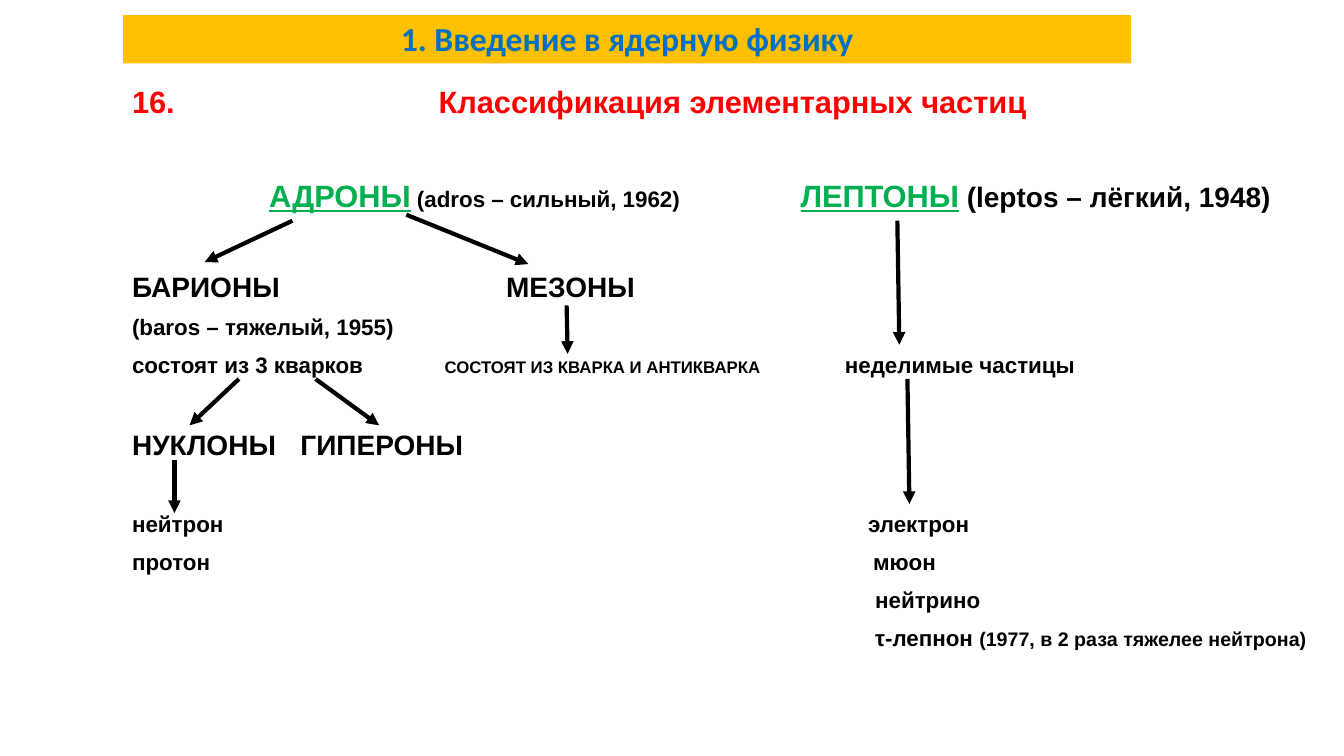
"""Builds a slide that classifies elementary particles as a tree."""
from dataclasses import dataclass

from lxml.etree import SubElement
from pptx import Presentation
from pptx.dml.color import RGBColor as Rgb
from pptx.enum.shapes import MSO_CONNECTOR as Connector
from pptx.enum.text import MSO_ANCHOR as Anchor, MSO_AUTO_SIZE as AutoSize, PP_ALIGN as Align
from pptx.oxml.ns import qn
from pptx.util import Pt

PX = 9144


@dataclass(frozen=True)
class Theme:
    band: Rgb = Rgb(0xFF, 0xC0, 0x00)
    heading: Rgb = Rgb(0x00, 0x70, 0xC0)
    topic: Rgb = Rgb(0xFF, 0x00, 0x00)
    family: Rgb = Rgb(0x00, 0xB0, 0x50)
    ink: Rgb = Rgb(0x00, 0x00, 0x00)
    arrow_width: int = 3

    def font(self, style):
        size, color, name, underline = {
            "heading": (24, self.heading, "Calibri", False),
            "topic": (22, self.topic, "Arial", False),
            "family": (22, self.family, "Arial", True),
            "group": (20, self.ink, "Arial", False),
            "body": (16, self.ink, "Arial", False),
            "note": (14, self.ink, "Arial", False),
            "small": (12, self.ink, "Arial", False),
        }[style]
        return dict(size=Pt(size), name=name, bold=True, underline=underline), color


class ParticleSlide:
    def __init__(self, deck, theme):
        self.theme = theme
        self.slide = deck.slides.add_slide(deck.slide_layouts[5])

    def add_runs(self, paragraph, runs):
        for text, style in runs:
            run = paragraph.add_run()
            run.text = text
            values, color = self.theme.font(style)
            for key, value in values.items():
                setattr(run.font, key, value)
            run.font.color.rgb = color

    def heading(self, text, left, top, width, height):
        title = self.slide.shapes.title
        box = dict(left=left, top=top, width=width, height=height)
        for key, value in box.items():
            setattr(title, key, value * PX)
        title.fill.solid()
        title.fill.fore_color.rgb = self.theme.band
        layout = dict(auto_size=AutoSize.NONE, vertical_anchor=Anchor.BOTTOM, word_wrap=True)
        for key, value in layout.items():
            setattr(title.text_frame, key, value)
        paragraph = title.text_frame.paragraphs[0]
        paragraph.alignment = Align.CENTER
        paragraph.line_spacing = 0.9
        self.add_runs(paragraph, [(text, "heading")])

    def label(self, left, middle, width, *runs):
        height = 40
        top = middle - height // 2
        label = self.slide.shapes.add_textbox(left * PX, top * PX, width * PX, height * PX)
        layout = dict(margin_left=0, margin_right=0, margin_top=0, margin_bottom=0,
                      word_wrap=True, vertical_anchor=Anchor.MIDDLE)
        for key, value in layout.items():
            setattr(label.text_frame, key, value)
        self.add_runs(label.text_frame.paragraphs[0], runs)

    def arrow(self, *ends):
        arrow = self.slide.shapes.add_connector(Connector.STRAIGHT, *(end * PX for end in ends))
        arrow.line.color.rgb = self.theme.ink
        arrow.line.width = Pt(self.theme.arrow_width)
        properties = arrow._element.spPr
        SubElement(properties.find(qn("a:ln")), qn("a:tailEnd"), type="triangle")
        SubElement(properties, qn("a:effectLst"))


def main():
    deck = Presentation()
    deck.slide_width, deck.slide_height = 1333 * PX, 750 * PX
    page = ParticleSlide(deck, Theme())
    page.heading("1. Введение в ядерную физику", 122, 15, 1000, 48)

    labels = [
        (131, 100, 60, ("16.", "topic")),
        (435, 100, 640, ("Классификация элементарных частиц", "topic")),
        (267, 194, 450, ("АДРОНЫ", "family"), (" ", "body"),
         ("(adros – сильный, 1962)", "body")),
        (794, 194, 500, ("ЛЕПТОНЫ", "family"), (" ", "group"),
         ("(leptos – лёгкий, 1948)", "group")),
        (131, 284, 200, ("БАРИОНЫ", "group")),
        (502, 284, 180, ("МЕЗОНЫ", "group")),
        (131, 324, 300, ("(baros – тяжелый, 1955)", "body")),
        (131, 362, 270, ("состоят из 3 кварков", "body")),
        (441, 364, 350, ("СОСТОЯТ ИЗ КВАРКА И АНТИКВАРКА", "small")),
        (838, 362, 270, ("неделимые частицы", "body")),
        (131, 441, 160, ("НУКЛОНЫ", "group")),
        (298, 441, 200, ("ГИПЕРОНЫ", "group")),
    ]
    for label in labels:
        page.label(*label)

    first_row, row_step = 519, 38
    nucleons = [(131, ("нейтрон", "body")), (131, ("протон", "body"))]
    leptons = [
        (861, ("электрон", "body")),
        (866, ("мюон", "body")),
        (868, ("нейтрино", "body")),
        (868, ("τ-лепнон ", "body"), ("(1977, в 2 раза тяжелее нейтрона)", "note")),
    ]
    for particles in (nucleons, leptons):
        for row, (left, *runs) in enumerate(particles):
            page.label(left, first_row + row * row_step, 455, *runs)

    arrows = [
        (290, 219, 203, 260), (403, 213, 524, 262), (562, 303, 563, 351),
        (237, 376, 188, 422), (313, 376, 376, 422), (173, 456, 173, 509),
        (890, 219, 892, 342), (900, 376, 902, 500),
    ]
    for ends in arrows:
        page.arrow(*ends)

    deck.save("out.pptx")


if __name__ == "__main__":
    main()
